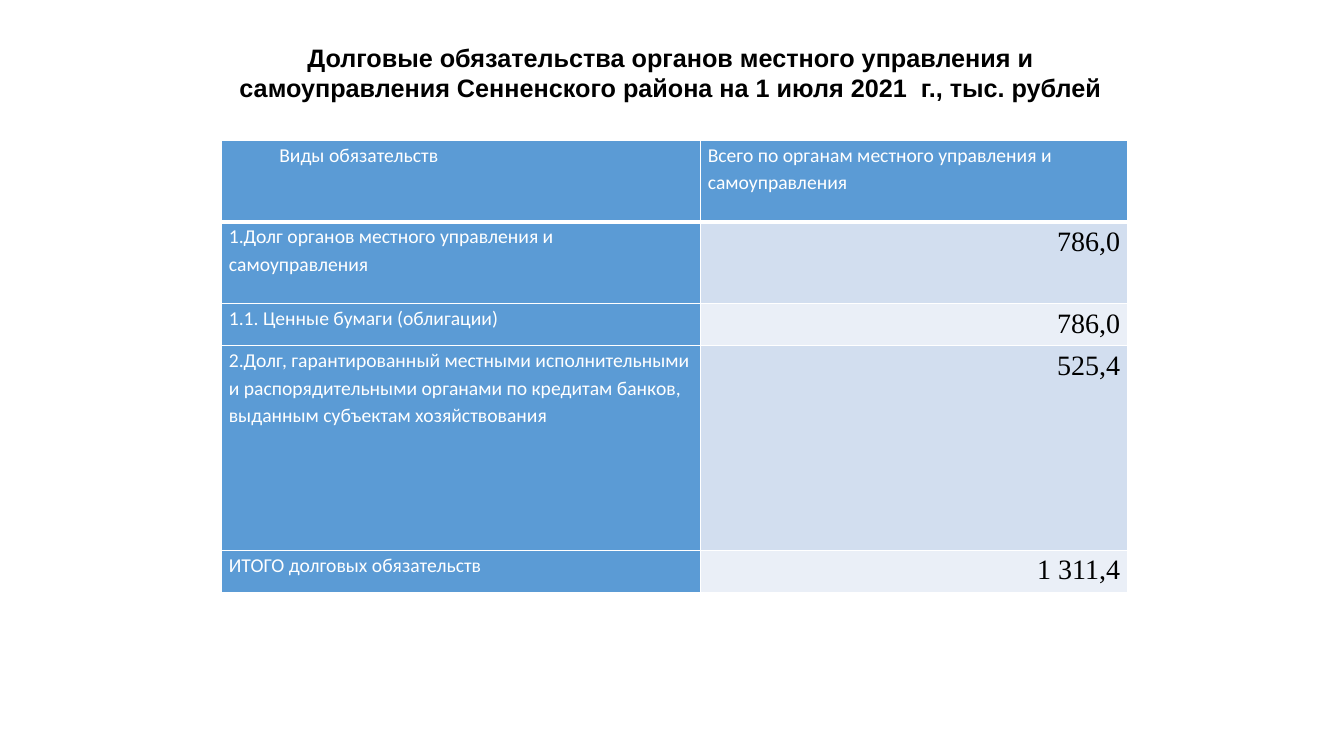
from dataclasses import dataclass

from lxml.etree import SubElement
from pptx import Presentation
from pptx.dml.color import RGBColor
from pptx.enum.text import MSO_ANCHOR, MSO_AUTO_SIZE, PP_ALIGN
from pptx.oxml.ns import qn
from pptx.util import Inches, Pt

COLORS = {
    "header": "5B9BD5",
    "band_dark": "D2DEEF",
    "band_light": "EAEFF7",
    "white": "FFFFFF",
    "black": "000000",
}
TITLE = (
    "Долговые обязательства органов местного управления и "
    "самоуправления Сенненского района на 1 июля 2021  г., тыс. рублей"
)
COLUMN_WIDTHS = (4.75, 4.23)


@dataclass
class DebtRow:
    label: str
    total: str
    height: float


@dataclass
class CellStyle:
    fill: str
    color: str = "white"
    font: str = "Calibri"
    size: int = 14
    align: PP_ALIGN = PP_ALIGN.LEFT


ROWS = [
    DebtRow("Виды обязательств", "Всего по органам местного управления и самоуправления", 0.81),
    DebtRow("1.Долг органов местного управления и самоуправления", "786,0", 0.81),
    DebtRow("1.1. Ценные бумаги (облигации)", " 786,0", 0.42),
    DebtRow(
        "2.Долг, гарантированный местными исполнительными и распорядительными "
        "органами по кредитам банков, выданным субъектам хозяйствования",
        "525,4",
        2.03,
    ),
    DebtRow("ИТОГО долговых обязательств", "1 311,4", 0.42),
]


def rgb(name: str) -> RGBColor:
    return RGBColor.from_string(COLORS[name])


def format_font(font, name: str, size: int, color: str, bold: bool) -> None:
    font.name, font.size, font.bold = name, Pt(size), bold
    font.color.rgb = rgb(color)


def add_borders(cell, bottom_width: int) -> None:
    properties = cell._tc.get_or_add_tcPr()
    for side, width in (("L", 1), ("R", 1), ("T", 1), ("B", bottom_width)):
        line = SubElement(properties, qn(f"a:ln{side}"), w=str(Pt(width)))
        fill = SubElement(line, qn("a:solidFill"))
        SubElement(fill, qn("a:srgbClr"), val=COLORS["white"])


def fill_cell(cell, text: str, style: CellStyle, bottom_width: int) -> None:
    add_borders(cell, bottom_width)
    cell.fill.solid()
    cell.fill.fore_color.rgb = rgb(style.fill)
    cell.margin_left = cell.margin_right = Inches(0.07)
    cell.margin_top = cell.margin_bottom = 0
    cell.text_frame.text = text
    para = cell.text_frame.paragraphs[0]
    para.alignment = style.align
    para.line_spacing = 1.15
    format_font(para.runs[0].font, style.font, style.size, style.color, False)


def add_title(page) -> None:
    box = page.shapes.title
    box.left, box.top = Inches(2.12), Inches(0.36)
    box.width, box.height = Inches(9.06), Inches(0.71)
    frame = box.text_frame
    frame.text = TITLE
    frame.word_wrap = True
    frame.auto_size = MSO_AUTO_SIZE.SHAPE_TO_FIT_TEXT
    frame.vertical_anchor = MSO_ANCHOR.MIDDLE
    para = frame.paragraphs[0]
    para.alignment = PP_ALIGN.CENTER
    para.line_spacing = 1.0
    para.space_before = Pt(0)
    format_font(para.runs[0].font, "Arial", 18, "black", True)


def add_debt_table(page) -> None:
    table = page.shapes.add_table(
        len(ROWS), len(COLUMN_WIDTHS), Inches(2.2), Inches(1.39),
        Inches(sum(COLUMN_WIDTHS)), Inches(sum(row.height for row in ROWS)),
    ).table
    for column, width in zip(table.columns, COLUMN_WIDTHS):
        column.width = Inches(width)

    header = CellStyle("header")
    for index, row in enumerate(ROWS):
        table.rows[index].height = Inches(row.height)
        band = "band_dark" if index % 2 else "band_light"
        value = CellStyle(band, "black", "Times New Roman", 20, PP_ALIGN.RIGHT)
        bottom_width = 1 if index else 3
        fill_cell(table.cell(index, 0), row.label, header, bottom_width)
        fill_cell(table.cell(index, 1), row.total, value if index else header, bottom_width)

    # The first heading is indented
    heading = table.cell(0, 0).text_frame.paragraphs[0]
    heading._p.get_or_add_pPr().set("marL", str(Inches(0.5)))


def main() -> None:
    deck = Presentation()
    deck.slide_width, deck.slide_height = Inches(13.33), Inches(7.5)
    page = deck.slides.add_slide(deck.slide_layouts[5])
    page.background.fill.solid()
    page.background.fill.fore_color.rgb = rgb("white")
    add_debt_table(page)
    add_title(page)
    deck.save("out.pptx")


if __name__ == "__main__":
    main()
